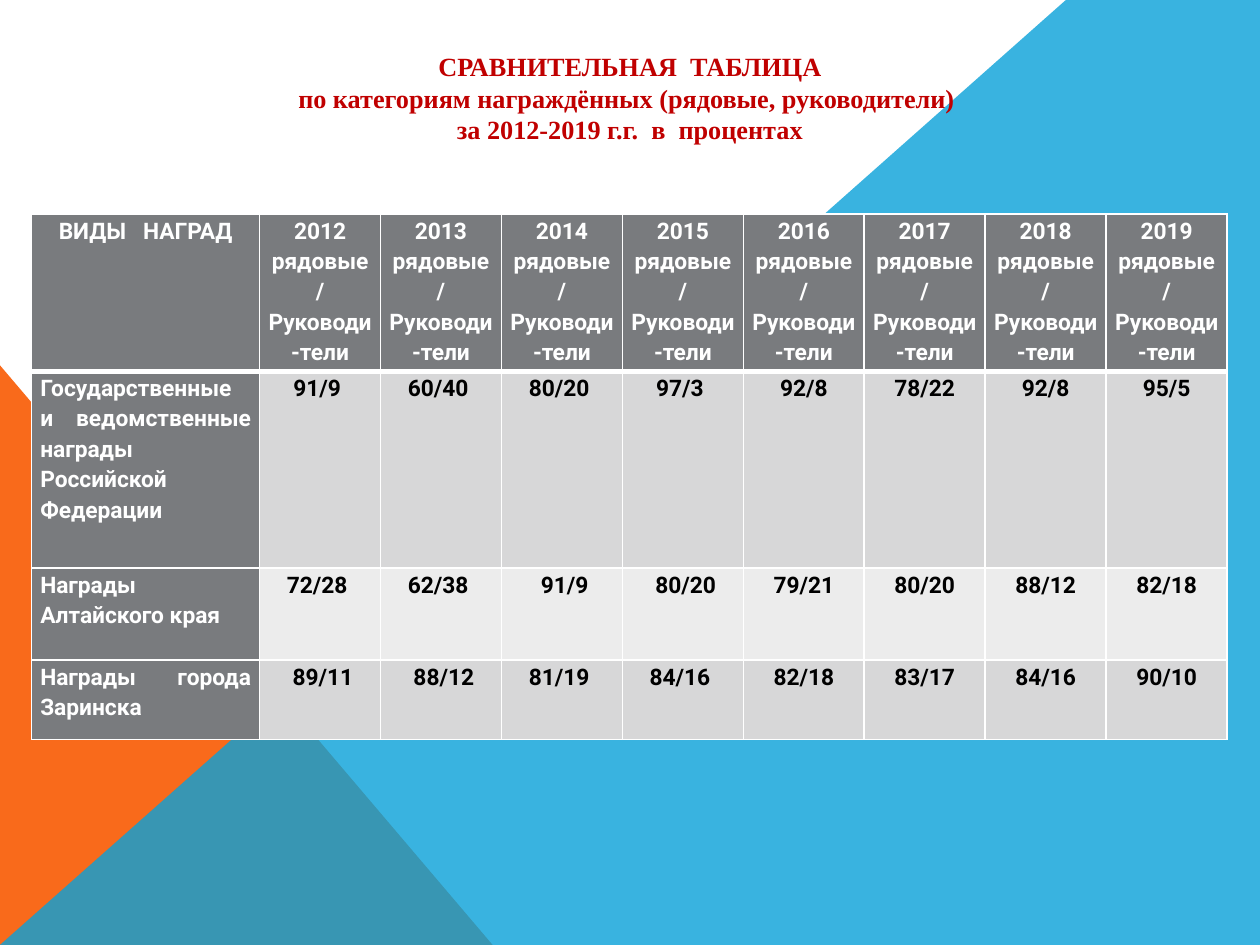
from lxml import etree
from pptx import Presentation
from pptx.dml.color import RGBColor
from pptx.enum.shapes import MSO_SHAPE
from pptx.enum.text import MSO_ANCHOR, PP_ALIGN
from pptx.oxml.ns import qn
from pptx.util import Inches, Pt

CENTER, JUSTIFY = PP_ALIGN.CENTER, PP_ALIGN.JUSTIFY
TOP = MSO_ANCHOR.TOP
RIGHT_TRIANGLE = MSO_SHAPE.RIGHT_TRIANGLE
TITLE_ONLY = 5

COLORS = {
    "orange": "F96A1B", "blue": "08A1D9", "title": "C00000",
    "head": "797B7E", "band_dark": "D7D7D8", "band_light": "ECECEC",
    "white": "FFFFFF", "black": "000000",
}
TITLE = [
    "СРАВНИТЕЛЬНАЯ  ТАБЛИЦА",
    "по категориям награждённых (рядовые, руководители) ",
    "за 2012-2019 г.г.  в  процентах",
]
YEARS = range(2012, 2020)
AWARDS = [
    ("Государственные  и  ведомственные награды  Российской Федерации",
     ["91/9 ", "60/40 ", "80/20 ", "97/3 ", "92/8", "78/22", "92/8", "95/5"]),
    ("Награды Алтайского края",
     ["72/28 ", "62/38 ", " 91/9", " 80/20", "79/21", "80/20", "88/12", "82/18"]),
    ("Награды города Заринска",
     [" 89/11", " 88/12", "81/19 ", "84/16 ", "82/18", "83/17", "84/16", "90/10"]),
]
COL_WIDTHS = [1.81] + [0.96] * len(YEARS)
ROW_HEIGHTS = [1.25, 1.56, 0.73, 0.63]


def rgb(name):
    return RGBColor.from_string(COLORS[name])


def paint(shape, color, alpha=None):
    shape.shadow.inherit = False
    shape.fill.solid()
    shape.fill.fore_color.rgb = rgb(color)
    shape.line.fill.background()
    if alpha is not None:
        clr = shape._element.spPr.find(qn("a:solidFill"))[0]
        etree.SubElement(clr, qn("a:alpha")).set("val", str(alpha * 1000))


def format_text(tf, font, size, color, align, spacing=None):
    for p in tf.paragraphs:
        p.alignment = align
        p.line_spacing = spacing
        for r in p.runs:
            r.font.name = font
            r.font.size = Pt(size)
            r.font.bold = True
            r.font.color.rgb = rgb(color)


def add_background(s):
    triangle = s.shapes.add_shape(
        RIGHT_TRIANGLE, 0, Inches(2.9), Inches(3.91), Inches(4.6))
    paint(triangle, "orange")
    builder = s.shapes.build_freeform(0, Inches(7.5))
    corners = [(8.46, 0), (10, 0), (10, 7.5)]
    builder.add_line_segments([(Inches(x), Inches(y)) for x, y in corners])
    paint(builder.convert_to_shape(), "blue", alpha=80)


def set_borders(cell, top, bottom):
    tcPr = cell._tc.get_or_add_tcPr()
    for tag, width in (("lnL", 1), ("lnR", 1), ("lnT", top), ("lnB", bottom)):
        ln = etree.SubElement(tcPr, qn(f"a:{tag}"), w=str(Pt(width)))
        fill = etree.SubElement(ln, qn("a:solidFill"))
        etree.SubElement(fill, qn("a:srgbClr"), val=COLORS["white"])


def fill_cell(cell, text, fill, color, align, top=1, bottom=1):
    cell.text_frame.text = text
    format_text(cell.text_frame, "Roboto", 13, color, align, 1.15)
    cell.margin_left = cell.margin_right = Inches(0.07)
    cell.margin_top = cell.margin_bottom = 0
    set_borders(cell, top, bottom)
    cell.fill.solid()
    cell.fill.fore_color.rgb = rgb(fill)


def add_awards_table(s):
    table = s.shapes.add_table(
        len(ROW_HEIGHTS), len(COL_WIDTHS), Inches(0.25), Inches(1.7),
        Inches(9.5), Inches(4.17)).table
    for col, width in zip(table.columns, COL_WIDTHS):
        col.width = Inches(width)
    for row, height in zip(table.rows, ROW_HEIGHTS):
        row.height = Inches(height)

    # Header row, with a thick rule below it
    headings = ["ВИДЫ   НАГРАД"]
    headings += [f"{year}\nрядовые/\nРуководи-тели" for year in YEARS]
    for c, text in enumerate(headings):
        fill_cell(table.cell(0, c), text, "head", "white", CENTER, bottom=3)

    # Banded award rows
    for r, (award, shares) in enumerate(AWARDS, start=1):
        top = 3 if r == 1 else 1
        band = "band_dark" if r % 2 else "band_light"
        fill_cell(table.cell(r, 0), award, "head", "white", JUSTIFY, top)
        for c, share in enumerate(shares, start=1):
            fill_cell(table.cell(r, c), share, band, "black", CENTER, top)


def add_title(s):
    title = s.shapes.title
    title.left, title.top = Inches(2.07), Inches(0.35)
    title.width, title.height = Inches(5.86), Inches(1.16)
    tf = title.text_frame
    tf.text = "\n".join(TITLE)
    tf.word_wrap = False
    tf.vertical_anchor = TOP
    format_text(tf, "Times New Roman", 15, "title", CENTER, 1.0)
    for p in tf.paragraphs:
        p.space_before = Pt(0)
    # Bring the title in front of the background shapes
    s.shapes._spTree.append(title._element)


def main():
    prs = Presentation()
    prs.slide_width, prs.slide_height = Inches(10), Inches(7.5)
    s = prs.slides.add_slide(prs.slide_layouts[TITLE_ONLY])
    add_background(s)
    add_awards_table(s)
    add_title(s)
    prs.save("out.pptx")


if __name__ == "__main__":
    main()
